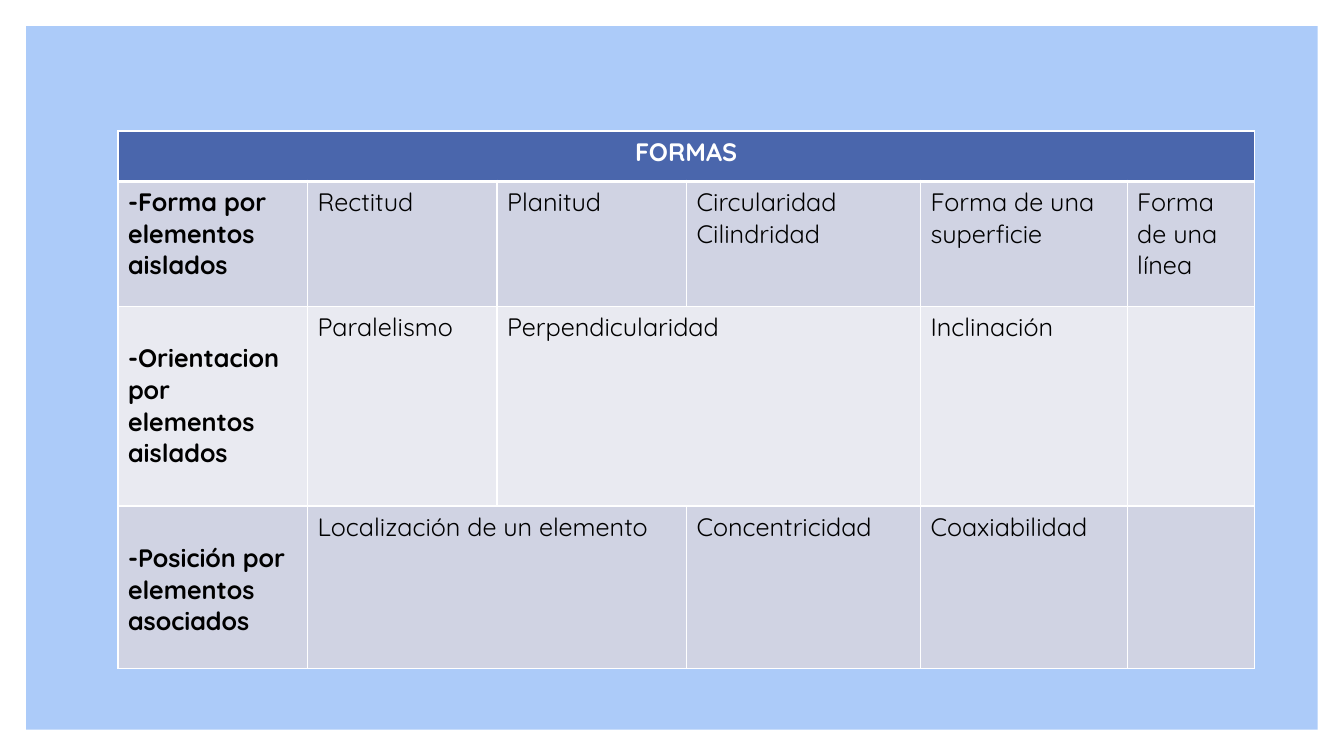
from lxml import etree
from pptx import Presentation
from pptx.dml.color import RGBColor
from pptx.enum.shapes import MSO_SHAPE as SHAPE
from pptx.enum.text import PP_ALIGN as ALIGN
from pptx.oxml.ns import qn
from pptx.util import Inches, Pt

WHITE = RGBColor(0xFF, 0xFF, 0xFF)
BLACK = RGBColor(0, 0, 0)
SKY = RGBColor(0xAC, 0xCB, 0xF9)
HEADER = RGBColor(0x4A, 0x66, 0xAC)
BAND_DARK = RGBColor(0xD0, 0xD3, 0xE3)
BAND_LIGHT = RGBColor(0xE9, 0xEA, 0xF1)
FONT = "Quicksand"

COLS = [1.88, 1.88, 1.88, 2.32, 2.05, 1.26]
ROWS = [0.5, 1.24, 1.98, 1.61]
FILLS = [HEADER, BAND_DARK, BAND_LIGHT, BAND_DARK]
TEXTS = [
    ["FORMAS", "", "", "", "", ""],
    ["-Forma por elementos aislados", "Rectitud", "Planitud",
     "Circularidad\nCilindridad", "Forma de una superficie", "Forma de una línea"],
    ["-Orientacion por elementos aislados", "Paralelismo", "Perpendicularidad",
     "", "Inclinación", ""],
    ["-Posición por elementos asociados", "Localización de un elemento", "",
     "Concentricidad", "Coaxiabilidad", ""],
]
MERGES = [(0, 0, 5), (2, 2, 3), (3, 1, 2)]  # row, first column, last column


def set_border(cell, side, width):
    ln = etree.SubElement(cell._tc.get_or_add_tcPr(), qn("a:" + side), w=str(Pt(width)))
    fill = etree.SubElement(ln, qn("a:solidFill"))
    etree.SubElement(fill, qn("a:srgbClr"), val=str(WHITE))


prs = Presentation()
prs.slide_width, prs.slide_height = Inches(13.33), Inches(7.5)
s = prs.slides.add_slide(prs.slide_layouts[6])

# Background panel with an even white margin
margin = Inches(0.26)
panel = s.shapes.add_shape(SHAPE.RECTANGLE, margin, margin,
                           prs.slide_width - 2 * margin, prs.slide_height - 2 * margin)
panel.shadow.inherit = False
panel.fill.solid()
panel.fill.fore_color.rgb = SKY
panel.line.fill.background()

# Table grid
table = s.shapes.add_table(len(ROWS), len(COLS), Inches(1.17), Inches(1.3),
                           Inches(sum(COLS)), Inches(sum(ROWS))).table
for col, width in zip(table.columns, COLS):
    col.width = Inches(width)
for row, height in zip(table.rows, ROWS):
    row.height = Inches(height)
for r, first, last in MERGES:
    table.cell(r, first).merge(table.cell(r, last))

# Cell borders, fills and text
for i, texts in enumerate(TEXTS):
    for j, text in enumerate(texts):
        cell = table.cell(i, j)
        for side in ("lnL", "lnR", "lnT", "lnB"):
            thick = (i, side) in ((0, "lnB"), (1, "lnT"))
            set_border(cell, side, 3 if thick else 1)
        cell.fill.solid()
        cell.fill.fore_color.rgb = FILLS[i]
        if j == 0 and i >= 2:
            cell.margin_top = Inches(0.36)  # row labels start one line lower
        p = cell.text_frame.paragraphs[0]
        p.alignment = ALIGN.CENTER if i == 0 else ALIGN.LEFT
        p.font.size = Pt(18)
        for n, line in enumerate(text.split("\n") if text else []):
            if n:
                p.add_line_break()
            run = p.add_run()
            run.text = line
            run.font.name = FONT
            run.font.size = Pt(18)
            run.font.bold = i == 0 or j == 0
            run.font.color.rgb = WHITE if i == 0 else BLACK

prs.save("out.pptx")
